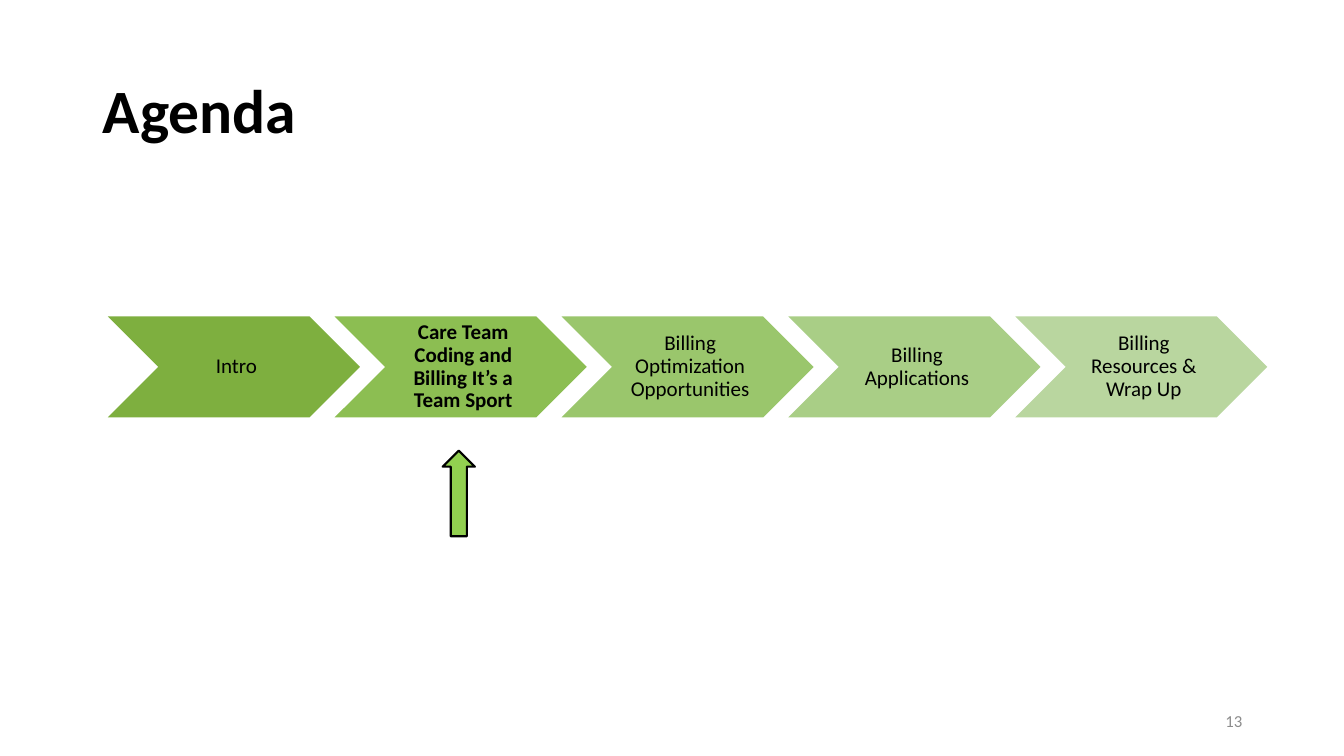
from dataclasses import dataclass

from pptx import Presentation
from pptx.dml.color import RGBColor
from pptx.enum.shapes import MSO_SHAPE
from pptx.enum.text import MSO_ANCHOR, PP_ALIGN
from pptx.util import Emu, Pt

# Content
TITLE = "Agenda"
STEPS = [
    ("Intro", "7EAF3F"),
    ("Care Team Coding and Billing It’s a Team Sport", "8CBE52"),
    ("Billing Optimization Opportunities", "9AC66C"),
    ("Billing Applications", "A9CE86"),
    ("Billing Resources & Wrap Up", "B9D69F"),
]
CURRENT_STEP = 1
PAGE_NUMBER = "13"


@dataclass(frozen=True)
class Theme:
    font: str = "Calibri"
    text: str = "000000"
    muted: str = "8C8C8C"
    marker: str = "92D050"
    title_size: int = 44
    step_size: int = 15
    number_size: int = 12


THEME = Theme()

# Layout in px, 100 to the inch
PX = 9144
SLIDE_SIZE = (1333, 750)
TITLE_BOX = (92, 40, 1150, 145)
NUMBER_BOX = (942, 695, 300, 40)
STEP_LEFT, STEP_TOP, STEP_WIDTH, STEP_HEIGHT = 107, 314, 250, 100
STEP_PITCH = 225
MARKER_TOP, MARKER_WIDTH, MARKER_HEIGHT = 447, 32, 85


def px(*lengths):
    return [Emu(length * PX) for length in lengths]


def color(value):
    return RGBColor.from_string(value)


def write(shape, text, size, text_color, alignment, bold=False, spacing=None):
    frame = shape.text_frame
    frame.word_wrap = True
    frame.vertical_anchor = MSO_ANCHOR.MIDDLE
    paragraph = frame.paragraphs[0]
    paragraph.alignment = alignment
    paragraph.line_spacing = spacing
    run = paragraph.add_run()
    run.text = text
    run.font.name = THEME.font
    run.font.size = Pt(size)
    run.font.bold = bold
    run.font.color.rgb = color(text_color)


def add_filled(slide, preset, box, fill):
    shape = slide.shapes.add_shape(preset, *px(*box))
    shape.shadow.inherit = False
    shape.fill.solid()
    shape.fill.fore_color.rgb = color(fill)
    shape.line.fill.background()
    return shape


def add_title(slide):
    title = slide.shapes.title
    title.left, title.top, title.width, title.height = px(*TITLE_BOX)
    write(title, TITLE, THEME.title_size, THEME.text, PP_ALIGN.LEFT, True, 0.9)


def add_steps(slide):
    for index, (label, fill) in enumerate(STEPS):
        left = STEP_LEFT + index * STEP_PITCH
        step = add_filled(slide, MSO_SHAPE.CHEVRON, (left, STEP_TOP, STEP_WIDTH, STEP_HEIGHT), fill)
        frame = step.text_frame
        frame.margin_left, frame.margin_top, frame.margin_right, frame.margin_bottom = px(7, 2, 2, 2)
        write(step, label, THEME.step_size, THEME.text, PP_ALIGN.CENTER, index == CURRENT_STEP, 0.9)


def add_marker(slide):
    # Centred below the current step
    center = STEP_LEFT + CURRENT_STEP * STEP_PITCH + STEP_WIDTH // 2
    box = (center - MARKER_WIDTH // 2 - 2, MARKER_TOP, MARKER_WIDTH, MARKER_HEIGHT)
    marker = add_filled(slide, MSO_SHAPE.UP_ARROW, box, THEME.marker)
    marker.line.color.rgb = color(THEME.text)
    marker.line.width = Pt(1.5)


def add_page_number(slide):
    number = slide.shapes.add_textbox(*px(*NUMBER_BOX))
    write(number, PAGE_NUMBER, THEME.number_size, THEME.muted, PP_ALIGN.RIGHT)


def main():
    presentation = Presentation()
    presentation.slide_width, presentation.slide_height = px(*SLIDE_SIZE)
    slide = presentation.slides.add_slide(presentation.slide_layouts.get_by_name("Title Only"))
    add_title(slide)
    add_steps(slide)
    add_page_number(slide)
    add_marker(slide)
    presentation.save("out.pptx")


if __name__ == "__main__":
    main()
